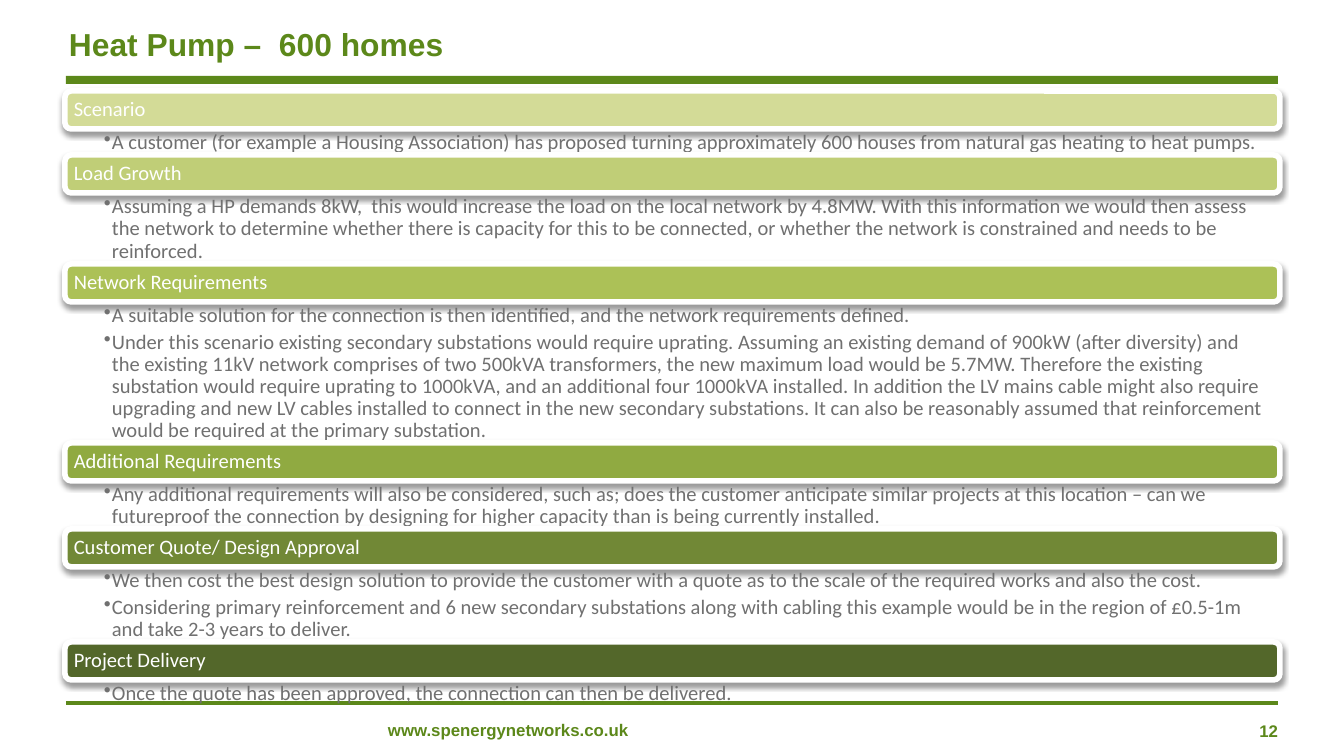
import pptx
import pptx.util
import pptx.dml.color
import pptx.enum.shapes
import pptx.enum.text
import pptx.oxml
import pptx.oxml.ns
from lxml import etree

Pt = pptx.util.Pt
RGBColor = pptx.dml.color.RGBColor
SHAPE = pptx.enum.shapes.MSO_SHAPE
ANCHOR = pptx.enum.text.MSO_ANCHOR
ALIGN = pptx.enum.text.PP_ALIGN
qn = pptx.oxml.ns.qn

GREEN = RGBColor(0x5C, 0x88, 0x1A)
WHITE = RGBColor(0xFF, 0xFF, 0xFF)
GREY = RGBColor(0x70, 0x70, 0x70)

TITLE = "Heat Pump –  600 homes"
WEBSITE = "www.spenergynetworks.co.uk"
PAGE = "12"

# Heading, bar colour, height of the bullet area in px, bullets
SECTIONS = [
    ("Scenario", RGBColor(0xD3, 0xDB, 0x97), 26, [
        "A customer (for example a Housing Association) has proposed turning approximately 600 houses "
        "from natural gas heating to heat pumps."]),
    ("Load Growth", RGBColor(0xC0, 0xCE, 0x77), 71, [
        "Assuming a HP demands 8kW,  this would increase the load on the local network by 4.8MW. "
        "With this information we would then assess the network to determine whether there is capacity "
        "for this to be connected, or whether the network is constrained and needs to be reinforced."]),
    ("Network Requirements", RGBColor(0xAC, 0xC1, 0x57), 141, [
        "A suitable solution for the connection is then identified, and the network requirements defined.",
        "Under this scenario existing secondary substations would require uprating. Assuming an existing "
        "demand of 900kW (after diversity) and the existing 11kV network comprises of two 500kVA "
        "transformers, the new maximum load would be 5.7MW. Therefore the existing substation would "
        "require uprating to 1000kVA, and an additional four 1000kVA installed. In addition the LV mains "
        "cable might also require upgrading and new LV cables installed to connect in the new secondary "
        "substations. It can also be reasonably assumed that reinforcement would be required at the "
        "primary substation."]),
    ("Additional Requirements", RGBColor(0x90, 0xAA, 0x41), 48, [
        "Any additional requirements will also be considered, such as; does the customer anticipate "
        "similar projects at this location – can we futureproof the connection by designing for higher "
        "capacity than is being currently installed."]),
    ("Customer Quote/ Design Approval", RGBColor(0x71, 0x88, 0x36), 75, [
        "We then cost the best design solution to provide the customer with a quote as to the scale of "
        "the required works and also the cost.",
        "Considering primary reinforcement and 6 new secondary substations along with cabling this "
        "example would be in the region of £0.5-1m and take 2-3 years to deliver."]),
    ("Project Delivery", RGBColor(0x53, 0x67, 0x2A), 54, [
        "Once the quote has been approved, the connection can then be delivered."]),
]

LEFT, WIDTH = 65, 1215
FIRST_TOP, BAR_H = 91, 38
RULE_LEFT, RULE_RIGHT = 66, 1278


def px(n):
    return round(n * 914400 / 134.4)


def set_frame(sp, insets, anchor=ANCHOR.TOP):
    tf = sp.text_frame
    tf.word_wrap = True
    tf.vertical_anchor = anchor
    tf.margin_left, tf.margin_top, tf.margin_right, tf.margin_bottom = map(px, insets)
    return tf


def add_run(p, text, size, color, font="Arial", bold=False):
    r = p.add_run()
    r.text = text
    r.font.name = font
    r.font.size = Pt(size)
    r.font.bold = bold
    r.font.color.rgb = color


def add_label(slide, box, text, size, insets=(0, 0, 0, 0), anchor=ANCHOR.TOP, align=ALIGN.LEFT):
    sp = slide.shapes.add_textbox(*map(px, box))
    p = set_frame(sp, insets, anchor).paragraphs[0]
    p.alignment = align
    add_run(p, text, size, GREEN, bold=True)
    return p


def add_shadow(sp):
    sp.shadow.inherit = False
    effects = sp._element.spPr.find(qn("a:effectLst"))
    shadow = etree.SubElement(effects, qn("a:outerShdw"), blurRad=str(Pt(3.1)), dist=str(Pt(1.6)),
                              dir="5400000", rotWithShape="0")
    color = etree.SubElement(shadow, qn("a:srgbClr"), val="000000")
    etree.SubElement(color, qn("a:alpha"), val="38000")


def add_bar(slide, top, heading, color):
    sp = slide.shapes.add_shape(SHAPE.ROUNDED_RECTANGLE, px(LEFT), px(top), px(WIDTH), px(BAR_H))
    sp.fill.solid()
    sp.fill.fore_color.rgb = color
    sp.line.color.rgb = WHITE
    sp.line.width = Pt(3)
    add_shadow(sp)
    p = set_frame(sp, (7, 0, 7, 0), ANCHOR.MIDDLE).paragraphs[0]
    p.alignment = ALIGN.LEFT
    p.line_spacing = 0.9
    add_run(p, heading, 11, WHITE, "Calibri")


def add_bullets(slide, top, height, bullets):
    sp = slide.shapes.add_textbox(px(LEFT), px(top), px(WIDTH), px(height))
    tf = set_frame(sp, (39, 3, 12, 3))
    for i, text in enumerate(bullets):
        p = tf.paragraphs[0] if i == 0 else tf.add_paragraph()
        p.line_spacing = 0.9
        p.space_after = Pt(2.2)
        pPr = p._p.get_or_add_pPr()
        pPr.set("marL", str(px(8)))
        pPr.set("indent", str(-px(8)))
        etree.SubElement(pPr, qn("a:buChar"), char="•")
        add_run(p, text, 11, GREY, "Calibri")


def main():
    prs = pptx.Presentation()
    prs.slide_width, prs.slide_height = px(1344), px(756)
    slide = prs.slides.add_slide(prs.slide_layouts[6])

    # Footer: rule, website and page number
    rule = slide.shapes.add_connector(pptx.enum.shapes.MSO_CONNECTOR.STRAIGHT,
                                      px(RULE_LEFT), px(703), px(RULE_RIGHT), px(703))
    rule.line.color.rgb = GREEN
    rule.line.width = Pt(2)
    etree.SubElement(rule._element.spPr, qn("a:effectLst"))
    add_label(slide, (388, 720, 332, 20), WEBSITE, 9)
    add_label(slide, (1132, 721, 146, 21), PAGE, 9, align=ALIGN.RIGHT)

    # Title with the band under it
    band = slide.shapes.add_shape(SHAPE.RECTANGLE, px(RULE_LEFT), px(76),
                                  px(RULE_RIGHT - RULE_LEFT), px(8))
    band.shadow.inherit = False
    band.fill.solid()
    band.fill.fore_color.rgb = GREEN
    band.line.fill.background()
    p = add_label(slide, (69, 13, 1262, 63), TITLE, 17, (0, 7, 13, 7), ANCHOR.MIDDLE)
    p.line_spacing = Pt(20)

    # Sections stacked from top to bottom
    top = FIRST_TOP
    for heading, color, height, bullets in SECTIONS:
        add_bar(slide, top, heading, color)
        add_bullets(slide, top + BAR_H, height, bullets)
        top += BAR_H + height

    prs.save("out.pptx")


if __name__ == "__main__":
    main()
